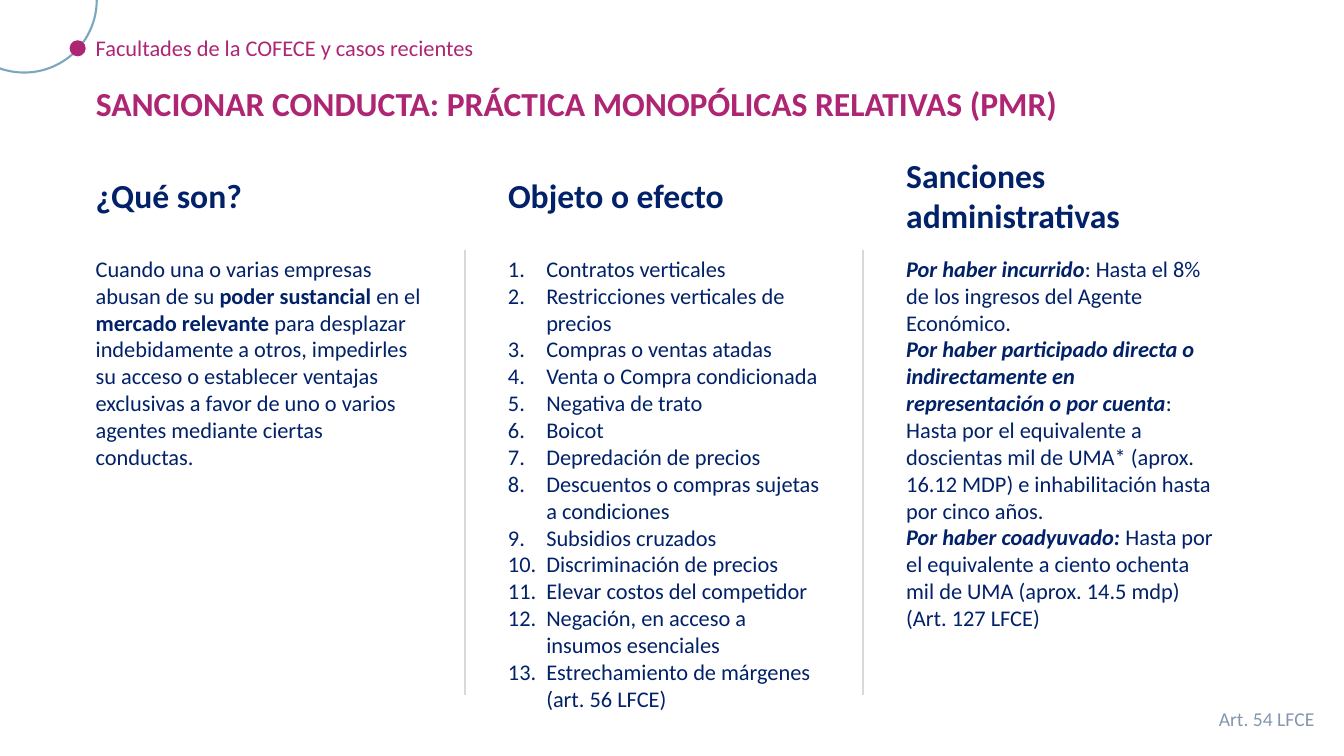
from lxml import etree
from pptx import Presentation
from pptx.dml.color import RGBColor
from pptx.enum.shapes import MSO_CONNECTOR, MSO_SHAPE
from pptx.enum.text import MSO_ANCHOR, MSO_AUTO_SIZE, PP_ALIGN
from pptx.oxml.ns import qn
from pptx.util import Inches, Pt

ARC, OVAL, STRAIGHT = MSO_SHAPE.ARC, MSO_SHAPE.OVAL, MSO_CONNECTOR.STRAIGHT
LEFT, TOP, NO_AUTOFIT = PP_ALIGN.LEFT, MSO_ANCHOR.TOP, MSO_AUTO_SIZE.NONE

MAGENTA = RGBColor(0xAE, 0x25, 0x73)
NAVY = RGBColor(0x01, 0x21, 0x69)
STEEL = RGBColor(0x7B, 0xA7, 0xBC)
SLATE = RGBColor(0x84, 0x97, 0xB0)
SILVER = RGBColor(0xD9, 0xD9, 0xD9)

TITLE_ONLY = 5
NUMBER_INDENT = Inches(0.38)

# Positions and sizes are percentages of the slide's width and height
BODY_TOP, DIVIDER_BOTTOM = 33.07, 91.87
HEADING_MIDDLE, HEADING_WIDTH = 25.87, 21.08
DIVIDER_GAP = 2.48
MARGIN = 6.38

DEFINITION = [
    "Cuando una o varias empresas abusan de su |poder sustancial| en el "
    "|mercado relevante |para desplazar indebidamente a otros, impedirles su "
    "acceso o establecer ventajas exclusivas a favor de uno o varios agentes "
    "mediante ciertas conductas.",
]
PRACTICES = [
    "Contratos verticales",
    "Restricciones verticales de precios",
    "Compras o ventas atadas",
    "Venta o Compra condicionada",
    "Negativa de trato",
    "Boicot",
    "Depredación de precios",
    "Descuentos o compras sujetas a condiciones",
    "Subsidios cruzados",
    "Discriminación de precios",
    "Elevar costos del competidor",
    "Negación, en acceso a insumos esenciales",
    "Estrechamiento de márgenes (art. 56 LFCE)",
]
SANCTIONS = [
    "|Por haber incurrido|: Hasta el 8% de los ingresos del Agente Económico.",
    "|Por haber participado directa o indirectamente en representación o por "
    "cuenta|: Hasta por el equivalente a doscientas mil de UMA* (aprox. 16.12 "
    "MDP) e inhabilitación hasta por cinco años.",
    "|Por haber coadyuvado: |Hasta por el equivalente a ciento ochenta mil de "
    "UMA (aprox. 14.5 mdp)",
    "(Art. 127 LFCE)",
]
# Left, body width, body height, heading, heading height, body, body format
COLUMNS = [
    (MARGIN, 25.73, 30.13, "¿Qué son?", 6.67, DEFINITION, {}),
    (37.06, 24.68, 62.4, "Objeto o efecto", 6.67, PRACTICES, {"numbered": True}),
    (66.69, 24.68, 51.6, "Sanciones administrativas", 12.13, SANCTIONS,
     {"italic_marks": True}),
]


def number(paragraph):
    properties = paragraph._p.get_or_add_pPr()
    properties.set("marL", str(NUMBER_INDENT))
    properties.set("indent", str(-NUMBER_INDENT))
    etree.SubElement(properties, qn("a:buFont"), typeface="+mj-lt")
    etree.SubElement(properties, qn("a:buAutoNum"), type="arabicPeriod")


def write_text(frame, paragraphs, size=16, color=NAVY, bold=False,
               italic_marks=False, numbered=False, wrap=True):
    """Fill a frame; the parts between bars are set in bold."""
    frame.word_wrap = wrap
    frame.auto_size = NO_AUTOFIT
    frame.vertical_anchor = TOP
    for index, text in enumerate(paragraphs):
        paragraph = frame.add_paragraph() if index else frame.paragraphs[0]
        paragraph.alignment = LEFT
        if numbered:
            number(paragraph)
        for position, part in enumerate(text.split("|")):
            if not part:
                continue
            marked = position % 2 == 1
            run = paragraph.add_run()
            run.text = part
            font = run.font
            font.name, font.size = "Calibri", Pt(size)
            font.color.rgb = color
            font.bold = bold or marked
            font.italic = italic_marks and marked


class SlideBuilder:
    def __init__(self, presentation):
        self.width = presentation.slide_width
        self.height = presentation.slide_height
        layout = presentation.slide_layouts[TITLE_ONLY]
        self.slide = presentation.slides.add_slide(layout)
        self.shapes = self.slide.shapes

    def x(self, share):
        return round(self.width * share / 100)

    def y(self, share):
        return round(self.height * share / 100)

    def box(self, left, top, width, height):
        return self.x(left), self.y(top), self.x(width), self.y(height)

    def title(self, text, *place, **style):
        title = self.shapes.title
        title.left, title.top, title.width, title.height = self.box(*place)
        write_text(title.text_frame, [text], **style)

    def text(self, paragraphs, *place, **style):
        textbox = self.shapes.add_textbox(*self.box(*place))
        write_text(textbox.text_frame, paragraphs, **style)

    def arc(self, *place, start, end, rotation, color):
        shape = self.shapes.add_shape(ARC, *self.box(*place))
        shape.adjustments[0], shape.adjustments[1] = start, end
        shape.rotation = rotation
        shape.shadow.inherit = False
        shape.fill.background()
        shape.line.color.rgb = color
        shape.line.width = Pt(1.5)

    def dot(self, *place, color):
        shape = self.shapes.add_shape(OVAL, *self.box(*place))
        shape.shadow.inherit = False
        shape.fill.solid()
        shape.fill.fore_color.rgb = color
        shape.line.fill.background()

    def divider(self, left, top, bottom, color):
        line = self.shapes.add_connector(
            STRAIGHT, self.x(left), self.y(top), self.x(left), self.y(bottom))
        line.line.color.rgb = color
        line.line.width = Pt(1.5)
        etree.SubElement(line._element.spPr, qn("a:effectLst"))


def main():
    presentation = Presentation()
    presentation.slide_width = Inches(13.33)
    presentation.slide_height = Inches(7.5)
    builder = SlideBuilder(presentation)

    # Corner ornament, section name and title
    builder.arc(-3.6, -9.6, 10.8, 19.2, start=80.19, end=146.89,
                rotation=225, color=STEEL)
    builder.text(["Facultades de la COFECE y casos recientes"],
                 MARGIN, 3.87, 50, 4.93, color=MAGENTA)
    builder.dot(5.18, 5.33, 1.2, 2.13, color=MAGENTA)
    builder.title("SANCIONAR CONDUCTA: PRÁCTICA MONOPÓLICAS RELATIVAS (PMR)",
                  MARGIN, 10.27, 81.55, 6.67, size=24, color=MAGENTA, bold=True)

    # Three columns, with a divider before each one but the first
    for index, column in enumerate(COLUMNS):
        left, width, height, heading, heading_height, body, style = column
        builder.text([heading], left, HEADING_MIDDLE - heading_height / 2,
                     HEADING_WIDTH, heading_height, size=24, bold=True)
        builder.text(body, left, BODY_TOP, width, height, **style)
        if index:
            builder.divider(left - DIVIDER_GAP, BODY_TOP, DIVIDER_BOTTOM, SILVER)

    # Legal reference
    builder.text(["Art. 54 LFCE"], 89.95, 92.8, 8.7, 4.53,
                 size=14, color=SLATE, wrap=False)

    presentation.save("out.pptx")


if __name__ == "__main__":
    main()
